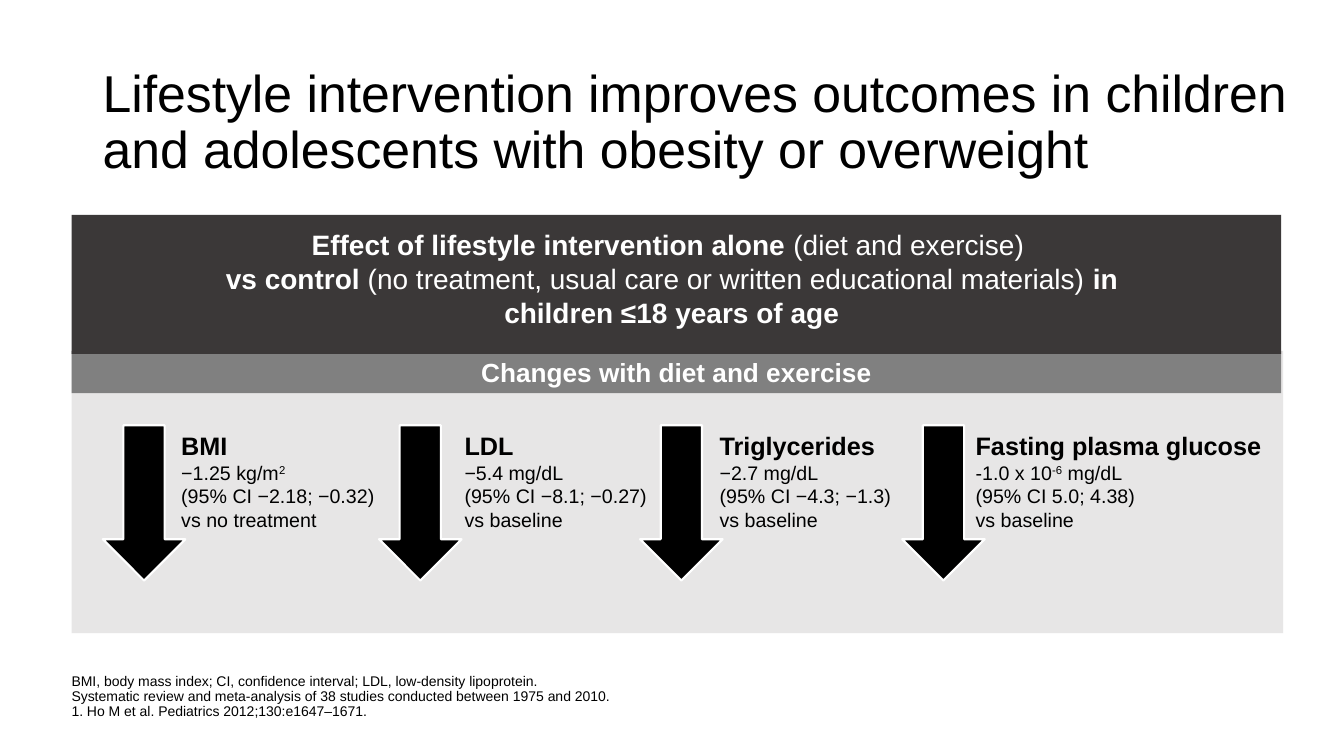
from pptx import Presentation
from pptx.dml.color import RGBColor
from pptx.enum import shapes, text
from pptx.util import Pt

BLACK = RGBColor(0x00, 0x00, 0x00)
WHITE = RGBColor(0xFF, 0xFF, 0xFF)
CHARCOAL = RGBColor(0x3B, 0x38, 0x38)
GREY = RGBColor(0x80, 0x80, 0x80)
PALE_GREY = RGBColor(0xE7, 0xE6, 0xE6)

LEFT = 51.1
BAND_WIDTH = 864
OUTCOME_TOP = 303.8

TITLE = "Lifestyle intervention improves outcomes in children and adolescents with obesity or overweight"
HEADER = [
    [("Effect of lifestyle intervention alone ", True), ("(diet and exercise) ", False)],
    [
        ("vs control ", True),
        ("(no treatment, usual care or written educational materials) ", False),
        ("in children ≤18 years of age", True),
    ],
]
FOOTNOTES = [
    "BMI, body mass index; CI, confidence interval; LDL, low-density lipoprotein. ",
    "Systematic review and meta-analysis of 38 studies conducted between 1975 and 2010.",
    "1. Ho M et al. Pediatrics 2012;130:e1647–1671.",
]
OUTCOMES = [
    (73.4, 122.4, 155.5, "BMI", ("−1.25 kg/m", "2", ""), "(95% CI −2.18; −0.32)", "vs no treatment"),
    (270.7, 324.7, 151.9, "LDL", ("−5.4 mg/dL", "", ""), "(95% CI −8.1; −0.27)", "vs baseline"),
    (457.2, 506.9, 157.7, "Triglycerides", ("−2.7 mg/dL", "", ""), "(95% CI −4.3; −1.3)", "vs baseline"),
    (644.4, 689.8, 231.8, "Fasting plasma glucose", ("-1.0 x 10", "-6", " mg/dL"), "(95% CI 5.0; 4.38)", "vs baseline"),
]


def add_span(para, words, size, color=BLACK, bold=False, raised=False):
    span = para.add_run()
    span.text = words
    span.font.name = "Arial"
    span.font.size = Pt(size)
    span.font.bold = bold
    span.font.color.rgb = color
    if raised:
        span.font._element.set("baseline", "30000")


def add_block(page, kind, left, top, width, height, fill):
    block = page.shapes.add_shape(kind, Pt(left), Pt(top), Pt(width), Pt(height))
    block.shadow.inherit = False
    block.fill.solid()
    block.fill.fore_color.rgb = fill
    block.line.fill.background()
    return block


def add_text(page, left, top, width, height, anchor=text.MSO_ANCHOR.TOP, inset=True):
    box = page.shapes.add_textbox(Pt(left), Pt(top), Pt(width), Pt(height))
    frame = box.text_frame
    frame.word_wrap = True
    frame.vertical_anchor = anchor
    if not inset:
        frame.margin_left = frame.margin_right = Pt(0)
        frame.margin_top = frame.margin_bottom = Pt(0)
    return frame


def next_para(frame, index):
    return frame.add_paragraph() if index else frame.paragraphs[0]


def add_title(page):
    frame = add_text(page, 66.2, 36, 882, 104.4, text.MSO_ANCHOR.MIDDLE)
    para = frame.paragraphs[0]
    para.line_spacing = 0.9
    add_span(para, TITLE, 37)


def add_footnotes(page):
    frame = add_text(page, LEFT, 488.9, 681.1, 25.2, text.MSO_ANCHOR.BOTTOM, inset=False)
    for index, note in enumerate(FOOTNOTES):
        para = next_para(frame, index)
        para.line_spacing = 0.9
        add_span(para, note, 10)


def add_band(page):
    rectangle = shapes.MSO_SHAPE.RECTANGLE
    band = add_block(page, rectangle, LEFT, 250.6, BAND_WIDTH, 30.2, GREY)
    band.text_frame.vertical_anchor = text.MSO_ANCHOR.MIDDLE
    para = band.text_frame.paragraphs[0]
    para.alignment = text.PP_ALIGN.CENTER
    add_span(para, "Changes with diet and exercise", 18.7, WHITE, bold=True)


def add_header(page):
    add_block(page, shapes.MSO_SHAPE.RECTANGLE, LEFT, 153.4, BAND_WIDTH, 99.4, CHARCOAL)
    frame = add_text(page, 155.5, 162.7, 648.7, 78.5, inset=False)
    for index, spans in enumerate(HEADER):
        para = next_para(frame, index)
        para.alignment = text.PP_ALIGN.CENTER
        for words, bold in spans:
            add_span(para, words, 20, WHITE, bold)


def add_outcome(page, arrow_left, label_left, label_width, name, change, interval, comparator):
    arrow = add_block(page, shapes.MSO_SHAPE.DOWN_ARROW, arrow_left, OUTCOME_TOP, 59, 110.9, BLACK)
    arrow.line.color.rgb = WHITE
    arrow.line.width = Pt(1.5)
    frame = add_text(page, label_left, OUTCOME_TOP, label_width, 105.8)
    add_span(frame.paragraphs[0], name, 18, bold=True)
    value, exponent, unit = change
    para = frame.add_paragraph()
    add_span(para, value, 14)
    if exponent:
        add_span(para, exponent, 14, raised=True)
    if unit:
        add_span(para, unit, 14)
    for line in (interval, comparator):
        add_span(frame.add_paragraph(), line, 14)


def main():
    deck = Presentation()
    deck.slide_width = Pt(960)
    deck.slide_height = Pt(540)
    page = deck.slides.add_slide(deck.slide_layouts[6])
    add_title(page)
    add_footnotes(page)
    add_block(page, shapes.MSO_SHAPE.RECTANGLE, LEFT, 250.6, 865.4, 201.6, PALE_GREY)
    add_band(page)
    for outcome in OUTCOMES:
        add_outcome(page, *outcome)
    add_header(page)
    deck.save("out.pptx")


if __name__ == "__main__":
    main()
